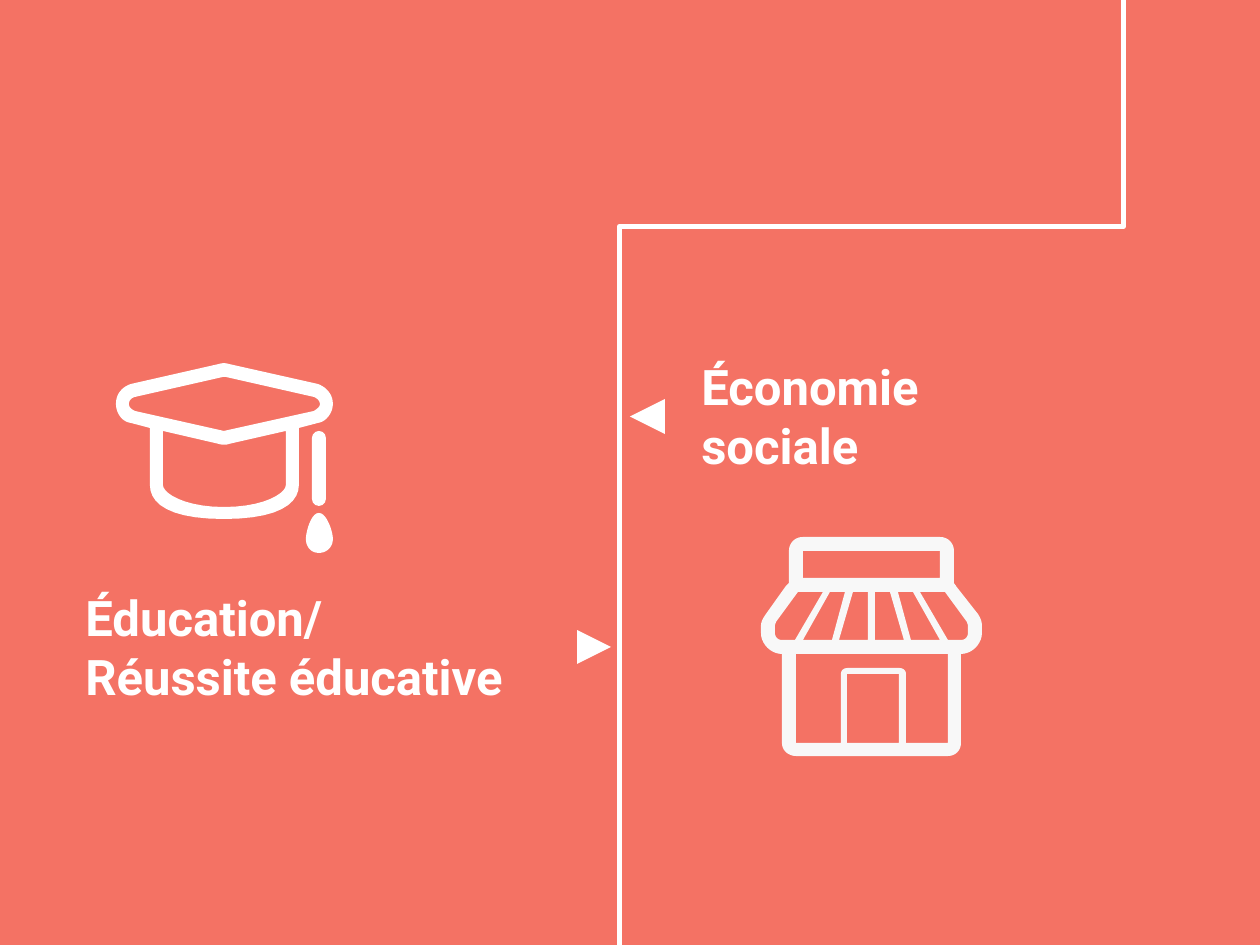
"""Build the slide on education and the social economy."""
from dataclasses import dataclass

from lxml import etree
from pptx import Presentation
from pptx.dml.color import RGBColor
from pptx.enum.shapes import MSO_CONNECTOR, MSO_SHAPE
from pptx.enum.text import MSO_AUTO_SIZE
from pptx.oxml.ns import qn
from pptx.util import Pt

PX = 914400 // 126
ELBOW = MSO_CONNECTOR.ELBOW
TRIANGLE = MSO_SHAPE.FLOWCHART_EXTRACT
ROUNDED = MSO_SHAPE.ROUNDED_RECTANGLE
FIT_SHAPE = MSO_AUTO_SIZE.SHAPE_TO_FIT_TEXT


@dataclass(frozen=True)
class Theme:
    coral: RGBColor = RGBColor(0xF4, 0x72, 0x64)
    white: RGBColor = RGBColor(0xFF, 0xFF, 0xFF)
    off_white: RGBColor = RGBColor(0xF8, 0xF8, 0xF8)
    font: str = "Roboto"
    label: Pt = Pt(28)
    rule: Pt = Pt(3)


theme = Theme()


def paint(s, color):
    """Give a shape a plain fill without line or shadow."""
    s.shadow.inherit = False
    s.fill.solid()
    s.fill.fore_color.rgb = color
    s.line.fill.background()


def draw_icon(contours, color, steps=10):
    """Draw contours whose entries are points (x, y) or cubic curves of three points."""
    builder = None
    for contour in contours:
        x, y = contour[0]
        points = []
        for entry in contour[1:]:
            if len(entry) == 2:
                points.append(entry)
            else:
                x1, y1, x2, y2, x3, y3 = entry
                for i in range(1, steps + 1):
                    t = i / steps
                    a, b, c, d = (1 - t) ** 3, 3 * t * (1 - t) ** 2, 3 * t * t * (1 - t), t ** 3
                    points.append((a * x + b * x1 + c * x2 + d * x3,
                                   a * y + b * y1 + c * y2 + d * y3))
            x, y = entry[-2:]
        start_x, start_y = (v * PX for v in contour[0])
        if builder is None:
            builder = shapes.build_freeform(start_x, start_y)
        else:
            builder.move_to(start_x, start_y)
        builder.add_line_segments([(px * PX, py * PX) for px, py in points], close=True)
    paint(builder.convert_to_shape(), color)


prs = Presentation()
prs.slide_width, prs.slide_height = 1260 * PX, 945 * PX
slide = prs.slides.add_slide(prs.slide_layouts[6])
slide.background.fill.solid()
slide.background.fill.fore_color.rgb = theme.coral
shapes = slide.shapes

road = shapes.add_connector(ELBOW, 399 * PX, 221 * PX, 1344 * PX, 725 * PX)
road.line.color.rgb = theme.white
road.line.width = theme.rule
sp_pr = road._element.spPr
sp_pr.find(qn("a:xfrm")).set("rot", "5400000")
guides = sp_pr.find(qn("a:prstGeom")).find(qn("a:avLst"))
etree.SubElement(guides, qn("a:gd"), name="adj1", fmla="val 23900")
etree.SubElement(sp_pr, qn("a:effectLst"))

cap = [
    [(224, 431), (135, 411), (131, 409, 129, 407, 129, 404), (129, 401, 131, 398, 135, 397),
     (223, 377), (226, 377), (314, 397), (317, 398, 320, 401, 320, 404),
     (320, 407, 317, 409, 314, 411)],
    [(286, 485), (286, 493, 265, 507, 224, 507), (184, 507, 163, 493, 163, 485),
     (163, 431), (219, 444), (222, 445, 227, 445, 229, 444), (286, 431)],
    [(333, 404), (333, 394, 326, 387, 318, 384), (229, 364), (226, 363, 222, 363, 219, 364),
     (131, 384), (122, 387, 116, 394, 116, 404), (116, 413, 122, 422, 131, 423),
     (150, 428), (150, 485), (150, 504, 170, 519, 224, 519), (278, 519, 299, 504, 299, 485),
     (299, 428), (318, 423), (326, 422, 333, 413, 333, 404)],
]
tassel = [
    [(319, 513), (311, 513, 306, 532, 306, 539), (306, 547, 311, 553, 319, 553),
     (327, 553, 333, 547, 333, 539), (333, 532, 327, 513, 319, 513)],
]
left_awning = [
    [(782, 640), (778, 640, 775, 637, 775, 633), (775, 626), (775, 624, 776, 623, 776, 622),
     (798, 592), (799, 592, 800, 592, 803, 592), (823, 592), (795, 640)],
    [(803, 640), (830, 592), (845, 592), (832, 640)],
    [(839, 640), (853, 592), (868, 592), (868, 640)],
]
right_awning = [[tuple(v if i % 2 else 1743 - v for i, v in enumerate(entry))
                 for entry in pane] for pane in left_awning]
shop = [
    [(978, 614), (956, 586), (956, 585, 955, 585, 954, 583), (954, 551),
     (954, 543, 948, 537, 940, 537), (803, 537), (795, 537, 789, 543, 789, 551),
     (789, 583), (786, 586), (766, 614), (764, 617, 761, 621, 761, 626), (761, 633),
     (761, 644, 771, 654, 782, 654), (782, 743), (782, 751, 789, 756, 796, 756),
     (948, 756), (955, 756, 961, 751, 961, 743), (961, 654),
     (972, 654, 982, 644, 982, 633), (982, 626), (982, 621, 980, 617, 978, 614)],
    [(803, 551), (940, 551), (940, 578), (803, 578)],
    [(948, 743), (906, 743), (906, 674), (906, 670, 903, 668, 899, 668), (848, 668),
     (844, 668, 841, 670, 841, 674), (841, 743), (796, 743), (796, 654), (948, 654)],
    [(847, 743), (847, 674), (899, 674), (899, 743)],
]

draw_icon(cap, theme.white)
cord = shapes.add_shape(ROUNDED, 312 * PX, 431 * PX, 14 * PX, 75 * PX)
cord.adjustments[0] = 0.5
paint(cord, theme.white)
draw_icon(tassel, theme.white)

for x, y, size, angle in [(630, 399, 35, 270), (577, 630, 34, 90)]:
    s = shapes.add_shape(TRIANGLE, x * PX, y * PX, size * PX, size * PX)
    s.rotation = angle
    paint(s, theme.white)

labels = [
    (689, 350, 365, ["Économie", "sociale"]),
    (73, 581, 474, ["Éducation/", "Réussite éducative"]),
]
for x, y, width, lines in labels:
    tf = shapes.add_textbox(x * PX, y * PX, width * PX, 131 * PX).text_frame
    tf.word_wrap = True
    tf.auto_size = FIT_SHAPE
    tf.text = "\n".join(lines)
    for p in tf.paragraphs:
        p.font.name = theme.font
        p.font.size = theme.label
        p.font.bold = True
        p.font.color.rgb = theme.white

draw_icon(shop + left_awning + right_awning, theme.off_white)

prs.save("out.pptx")
